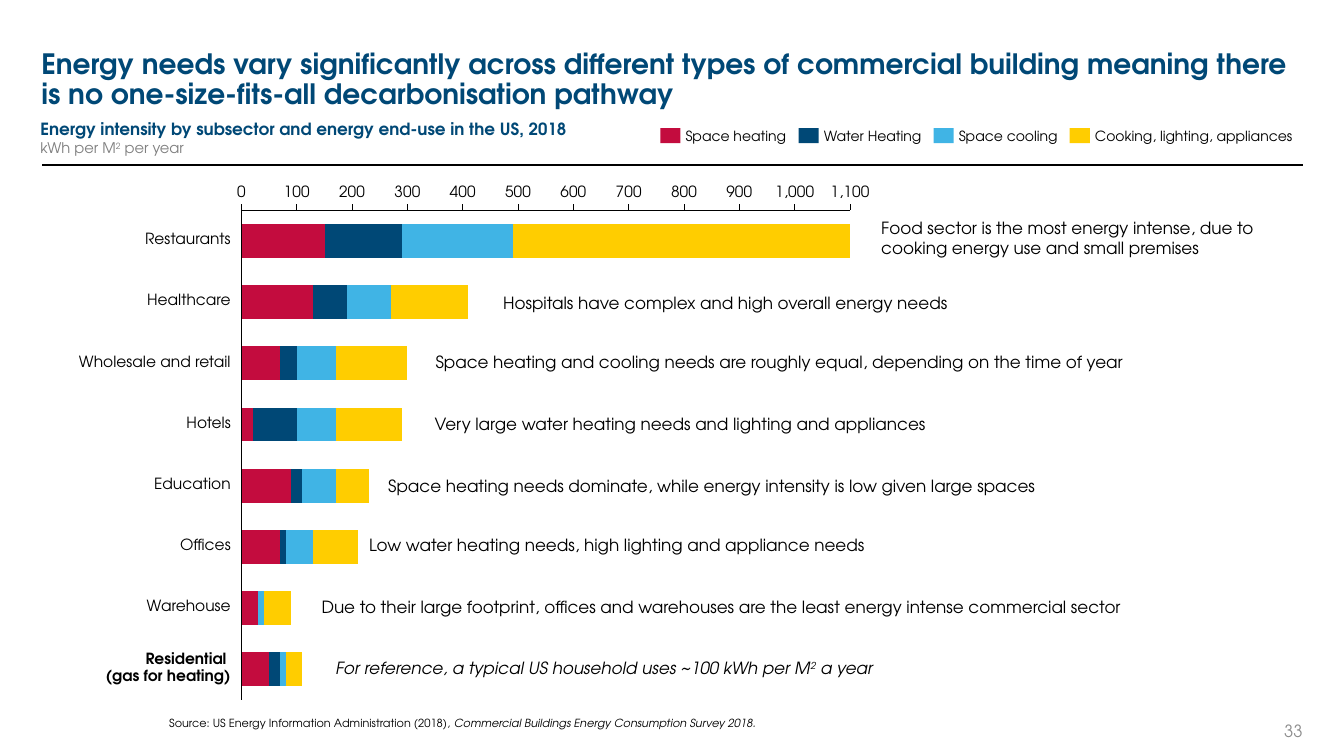
import pptx
import pptx.chart.data
import pptx.dml.color
import pptx.enum.chart
import pptx.enum.shapes
import pptx.enum.text
import pptx.oxml
import pptx.oxml.ns
import pptx.util
from pptx.util import Inches

FONT = "TeX Gyre Adventor"
COLORS = {"red": "C30C3E", "navy": "004876", "sky": "40B4E5", "yellow": "FFCD00",
          "black": "000000", "grey": "808080", "number": "8C8C8C"}

# Text, colour, left and width of each legend label
LEGEND = [("Space heating", "red", 6.8, 1.0), ("Water Heating", "navy", 8.17, 0.98),
          ("Space cooling", "sky", 9.51, 0.98),
          ("Cooking, lighting, appliances", "yellow", 10.86, 2.01)]

SERIES = [("Series 1", "red", [150, 130, 70, 20, 90, 70, 30, 50]),
          ("Series 2", "navy", [140, 60, 30, 80, 20, 10, 0, 20]),
          ("Series 3", "sky", [200, 80, 70, 70, 60, 50, 10, 10]),
          ("Series 4", "yellow", [610, 140, 130, 120, 60, 80, 50, 30])]

# Text and width, with a little room so that no word breaks
SECTORS = [("Restaurants", 0.9), ("Healthcare", 0.88), ("Wholesale and retail", 1.56),
           ("Hotels", 0.5), ("Education", 0.81), ("Offices", 0.57), ("Warehouse", 0.89)]

# Text, left, middle, width, height
NOTES = [
    ("Food sector is the most energy intense, due to cooking energy use and small premises",
     8.66, 2.36, 4.02, 0.5),
    ("Hospitals have complex and high overall energy needs", 4.91, 3.0, 8.01, 0.5),
    ("Space heating and cooling needs are roughly equal, depending on the time of year",
     4.24, 3.59, 8.01, 0.5),
    ("Very large water heating needs and lighting and appliances", 4.23, 4.2, 8.01, 0.5),
    ("Space heating needs dominate, while energy intensity is low given large spaces",
     3.77, 4.82, 8.01, 0.5),
    ("Low water heating needs, high lighting and appliance needs", 3.58, 5.4, 9.49, 0.41),
    ("Due to their large footprint, offices and warehouses are the least energy intense "
     "commercial sector", 3.11, 6.02, 9.76, 0.41),
]


def rgb(name):
    return pptx.dml.color.RGBColor.from_string(COLORS[name])


def add_text(slide, text, left, top, width, height, size=12, color="black", bold=False,
             italic=False, align="LEFT", anchor="MIDDLE", inset=(0, 0), spacing=None, wrap=True):
    """Text is a string, or paragraphs that are lists of (run text, changed format)."""
    box = slide.shapes.add_textbox(Inches(left), Inches(top), Inches(width), Inches(height))
    tf = box.text_frame
    tf.word_wrap = wrap
    tf.vertical_anchor = getattr(pptx.enum.text.MSO_ANCHOR, anchor)
    tf.margin_left = tf.margin_right = Inches(inset[0])
    tf.margin_top = tf.margin_bottom = Inches(inset[1])
    paragraphs = [[(text, {})]] if isinstance(text, str) else text
    for i, runs in enumerate(paragraphs):
        p = tf.add_paragraph() if i else tf.paragraphs[0]
        p.alignment = getattr(pptx.enum.text.PP_ALIGN, align)
        if spacing:
            p.line_spacing = spacing
        for run_text, changes in runs:
            r = p.add_run()
            r.text = run_text
            r.font.name = FONT
            r.font.size = pptx.util.Pt(changes.get("size", size))
            r.font.bold = changes.get("bold", bold)
            r.font.italic = changes.get("italic", italic)
            r.font.color.rgb = rgb(changes.get("color", color))
            if changes.get("superscript"):
                r.font._element.set("baseline", "30000")


def add_legend(slide):
    for text, color, left, width in LEGEND:
        sp = slide.shapes.add_shape(pptx.enum.shapes.MSO_SHAPE.RECTANGLE, Inches(left - 0.25),
                                    Inches(1.27), Inches(0.2), Inches(0.15))
        sp.fill.solid()
        sp.fill.fore_color.rgb = rgb(color)
        sp.line.fill.background()
        sp.shadow.inherit = False
        add_text(slide, text, left, 1.28, width, 0.15, size=10, spacing=0.9, wrap=False)


def add_rule(slide):
    line = slide.shapes.add_connector(pptx.enum.shapes.MSO_CONNECTOR.STRAIGHT, Inches(0.42),
                                      Inches(1.64), Inches(12.92), Inches(1.64))
    line.line.color.rgb = rgb("black")
    line.line.width = pptx.util.Pt(1.5)
    line._element.spPr.append(pptx.oxml.parse_xml(
        f'<a:effectLst {pptx.oxml.ns.nsdecls("a")}/>'))


def set_plot_area(chart, x, y, w, h):
    plot_area = chart._chartSpace.chart.plotArea
    for old in plot_area.findall(pptx.oxml.ns.qn("c:layout")):
        plot_area.remove(old)
    plot_area.insert(0, pptx.oxml.parse_xml(
        f'<c:layout {pptx.oxml.ns.nsdecls("c")}><c:manualLayout>'
        '<c:layoutTarget val="inner"/><c:xMode val="edge"/><c:yMode val="edge"/>'
        f'<c:x val="{x}"/><c:y val="{y}"/><c:w val="{w}"/><c:h val="{h}"/>'
        '</c:manualLayout></c:layout>'))


def add_energy_chart(slide):
    data = pptx.chart.data.CategoryChartData()
    data.categories = [str(n) for n in range(1, 9)]
    for name, _, values in SERIES:
        data.add_series(name, values)
    enum = pptx.enum.chart
    chart = slide.shapes.add_chart(enum.XL_CHART_TYPE.BAR_STACKED, Inches(2.17), Inches(1.64),
                                   Inches(6.64), Inches(5.39), data).chart
    chart.has_legend = chart.has_title = False
    chart.font.name, chart.font.size = FONT, pptx.util.Pt(11)
    chart.font.color.rgb = rgb("black")
    set_plot_area(chart, 0.034, 0.083, 0.909, 0.901)

    plot = chart.plots[0]
    plot.gap_width, plot.overlap, plot.vary_by_categories = 80, 100, False
    for series, (_, color, _) in zip(plot.series, SERIES):
        series.format.fill.solid()
        series.format.fill.fore_color.rgb = rgb(color)

    for axis in (chart.category_axis, chart.value_axis):
        axis.has_major_gridlines = False
        axis.major_tick_mark = axis.minor_tick_mark = enum.XL_TICK_MARK.NONE
        axis.format.line.color.rgb = rgb("black")
        axis.format.line.width = pptx.util.Pt(0.75)
    chart.category_axis.reverse_order = True
    chart.category_axis.tick_label_position = enum.XL_TICK_LABEL_POSITION.NONE
    scale = chart.value_axis
    scale.minimum_scale, scale.maximum_scale, scale.major_unit = 0, 1100, 100
    scale.major_tick_mark = enum.XL_TICK_MARK.OUTSIDE
    scale.tick_label_position = enum.XL_TICK_LABEL_POSITION.NEXT_TO_AXIS
    scale.tick_labels.number_format = '#,##0;"-"#,##0'
    scale.tick_labels.number_format_is_linked = False


def add_sector_labels(slide):
    right, first, step = 2.29, 2.38, 0.606
    label = {"size": 11, "align": "RIGHT", "spacing": 0.9, "wrap": False}
    for i, (text, width) in enumerate(SECTORS):
        add_text(slide, text, right - width, first + i * step - 0.08, width, 0.16, **label)
    add_text(slide, [[("Residential ", {})], [("(gas for heating)", {})]],
             right - 1.3, 6.46, 1.3, 0.33, bold=True, **label)


def add_notes(slide):
    inset = (0.08, 0.08)
    for text, left, middle, width, height in NOTES:
        add_text(slide, text, left, middle - height / 2, width, height, inset=inset)
    add_text(slide, [[("For reference, a typical US household uses ~100 kWh per M", {}),
                      ("2", {"superscript": True}), (" a year", {})]],
             3.25, 6.42, 8.12, 0.41, italic=True, inset=inset)


def main():
    prs = pptx.Presentation()
    prs.slide_width, prs.slide_height = Inches(13.33), Inches(7.5)
    slide = prs.slides.add_slide(prs.slide_layouts[6])

    add_text(slide, "Energy needs vary significantly across different types of commercial building "
             "meaning there is no one-size-fits-all decarbonisation pathway",
             0.41, 0.41, 12.52, 0.78, size=20, color="navy", bold=True, spacing=0.9)
    add_text(slide, "33", 12.37, 6.94, 0.55, 0.41, color="number", align="RIGHT", anchor="BOTTOM")
    add_text(slide, [[("Source: US Energy Information Administration (2018), ", {}),
                      ("Commercial Buildings Energy Consumption Survey 2018.", {"italic": True})]],
             1.58, 7.06, 10.58, 0.22, size=8, anchor="TOP", inset=(0.1, 0.05))
    add_energy_chart(slide)
    add_sector_labels(slide)
    add_legend(slide)
    unit = {"size": 10.5, "color": "grey", "bold": False}
    add_text(slide, [[("Energy intensity by subsector and energy end-use in the US, 2018", {})],
                     [("kWh per M", unit), ("2", {**unit, "superscript": True}),
                      (" per year", unit)]],
             0.4, 1.18, 8.31, 0.38, color="navy", bold=True, anchor="TOP")
    add_rule(slide)
    add_notes(slide)
    prs.save("out.pptx")


if __name__ == "__main__":
    main()
